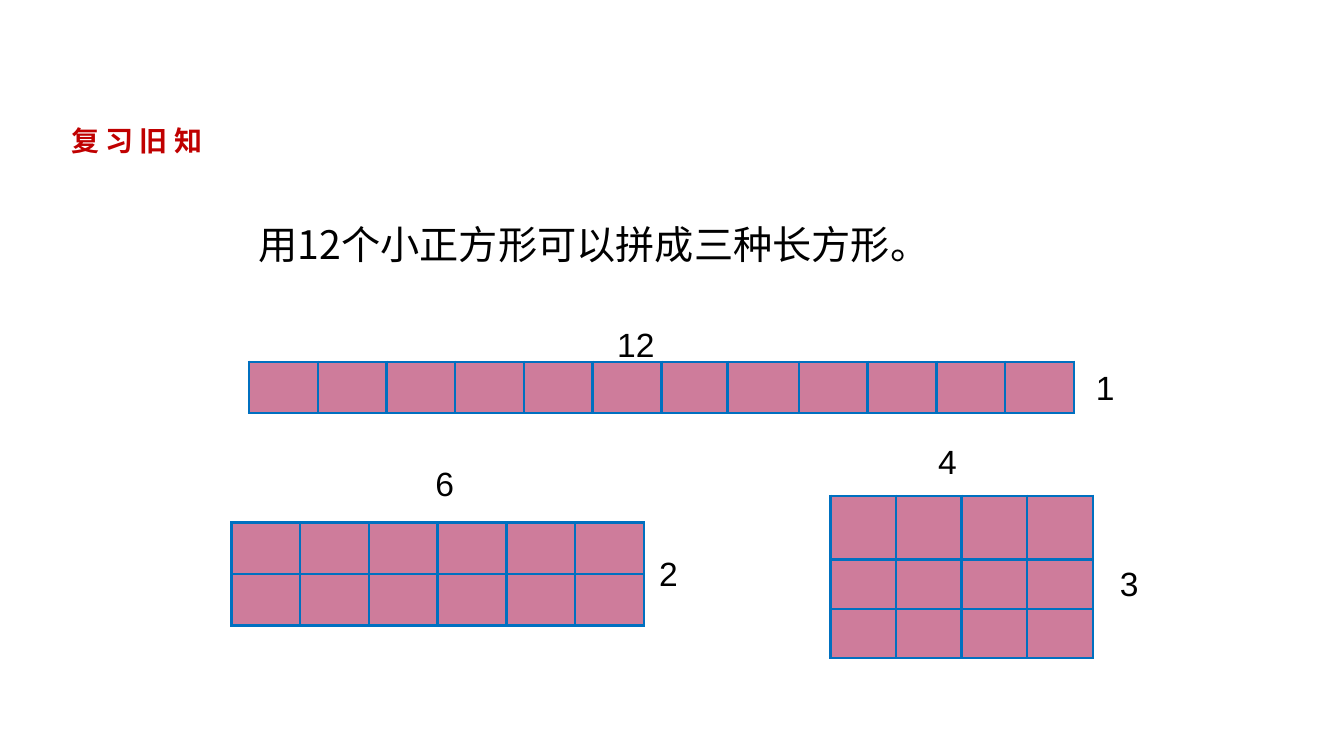
from lxml import etree
from pptx import Presentation
from pptx import util as u
from pptx.dml.color import RGBColor
from pptx.enum import text
from pptx.oxml import ns

COLORS = {"square": "CE7C9B", "border": "0070C0", "ink": "000000", "heading": "C00000"}
CJK = "Noto Sans CJK SC"
LEFT, CENTER = text.PP_ALIGN.LEFT, text.PP_ALIGN.CENTER


def add_grid(slide, left, top, widths, heights):
    frame = slide.shapes.add_table(len(heights), len(widths), u.Pt(left), u.Pt(top),
                                   u.Pt(sum(widths)), u.Pt(sum(heights)))
    table = frame.table
    table.first_row = table.horz_banding = False
    for column, width in zip(table.columns, widths):
        column.width = u.Pt(width)
    for row, height in zip(table.rows, heights):
        row.height = u.Pt(height)
    for cell in table.iter_cells():
        cell.margin_top = cell.margin_bottom = 0
        cell.text_frame.paragraphs[0].font.size = u.Pt(12)
        properties = cell._tc.get_or_add_tcPr()
        for side in ("a:lnL", "a:lnR", "a:lnT", "a:lnB"):
            line = etree.SubElement(properties, ns.qn(side), w=str(u.Pt(1.5)))
            fill = etree.SubElement(line, ns.qn("a:solidFill"))
            etree.SubElement(fill, ns.qn("a:srgbClr"), val=COLORS["border"])
        cell.fill.solid()
        cell.fill.fore_color.rgb = RGBColor.from_string(COLORS["square"])


def add_text(slide, words, left, top, width, height, size=18, font="Arial", color="ink",
             bold=False, align=LEFT, wrap=True):
    box = slide.shapes.add_textbox(u.Pt(left), u.Pt(top), u.Pt(width), u.Pt(height))
    frame = box.text_frame
    frame.word_wrap = wrap
    frame.auto_size = text.MSO_AUTO_SIZE.SHAPE_TO_FIT_TEXT
    frame.margin_left = frame.margin_right = u.Pt(5.3)
    frame.margin_top = frame.margin_bottom = u.Pt(2.7)
    paragraph = frame.paragraphs[0]
    paragraph.alignment = align
    run = paragraph.add_run()
    run.text = words
    run.font.size = u.Pt(size)
    run.font.bold = bold
    run.font.name = font
    run.font.color.rgb = RGBColor.from_string(COLORS[color])
    etree.SubElement(run._r.get_or_add_rPr(), ns.qn("a:ea"), typeface=font)
    return paragraph


presentation = Presentation()
presentation.slide_width = u.Pt(720)
presentation.slide_height = u.Pt(405)
slide = presentation.slides.add_slide(presentation.slide_layouts[6])

grids = [
    (133.4, 193.9, [36.85] * 6 + [35.3, 38.4] + [36.85] * 4, [27.5]),
    (124, 279.8, [36.85] * 6, [27.7] * 2),
    (445, 265.7, [35.1] * 4, [34, 26.5, 26.5]),
]
for left, top, widths, heights in grids:
    add_grid(slide, left, top, widths, heights)

side_lengths = [
    ("12", 325.4, 170.6, 64.8, LEFT),
    ("1", 581.8, 193.7, 64.8, LEFT),
    ("6", 205.9, 245.5, 64.8, CENTER),
    ("2", 347.8, 293.4, 41, LEFT),
    ("4", 475.2, 233.3, 64.8, CENTER),
    ("3", 594.7, 298.8, 41, LEFT),
]
for number, left, top, width, align in side_lengths:
    add_text(slide, number, left, top, width, 27.4, align=align)

statement = add_text(slide, "用12个小正方形可以拼成三种长方形。", 133.2, 103, 406, 44, size=21, font=CJK)
statement.line_spacing = 1.5

heading = add_text(slide, "复 习 旧 知", 5.8, 63.4, 112.3, 23.8, size=15, font=CJK,
                   color="heading", bold=True, wrap=False)
indent = heading._p.get_or_add_pPr()
indent.set("marL", str(u.Pt(27)))
indent.set("indent", "0")

presentation.save("out.pptx")
